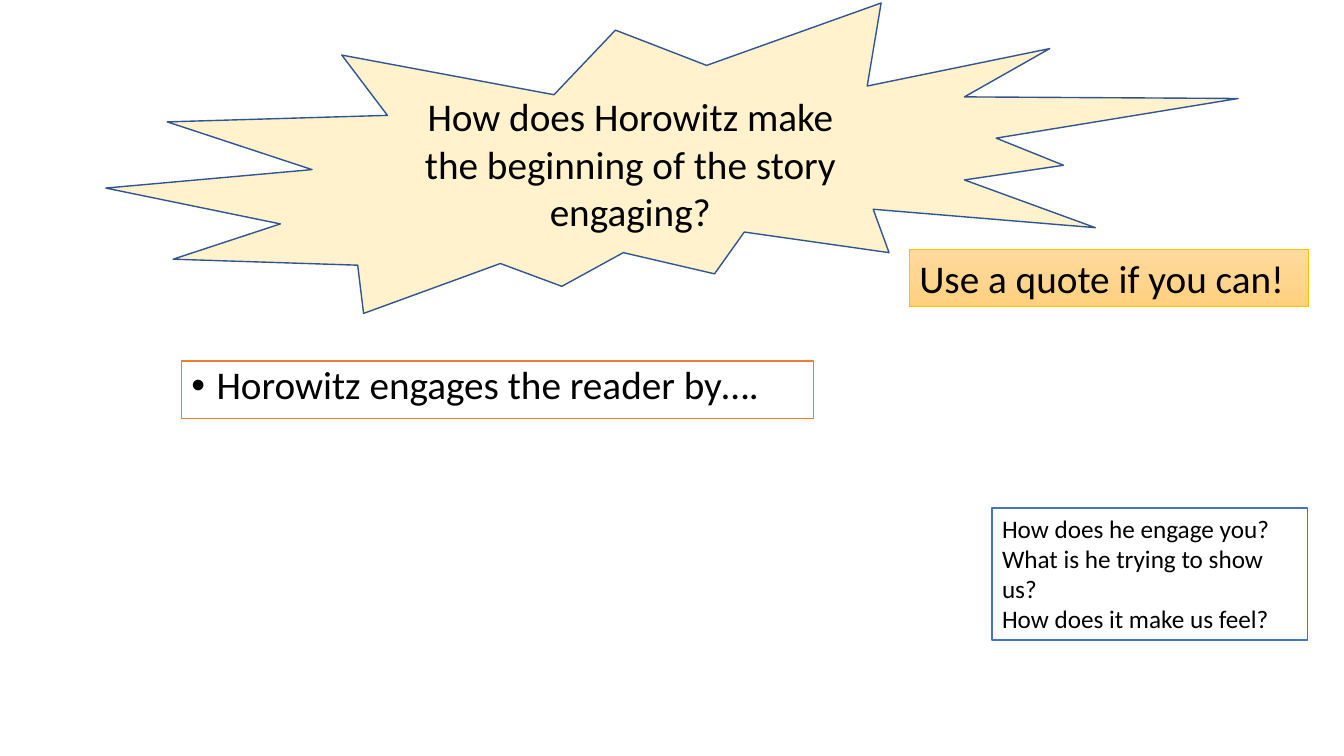
from copy import deepcopy
from dataclasses import dataclass

from pptx import Presentation
from pptx.dml.color import RGBColor as RGB
from pptx.enum.shapes import MSO_SHAPE as SHAPE
from pptx.enum.text import MSO_ANCHOR as ANCHOR, MSO_AUTO_SIZE as FIT, PP_ALIGN as ALIGN
from pptx.oxml import parse_xml
from pptx.oxml.ns import nsdecls
from pptx.util import Pt

PX = 9144  # EMU per px, 100 px to the inch


@dataclass(frozen=True)
class Theme:
    font: str = "Calibri"
    large: int = 28
    small: int = 18
    text: str = "000000"
    white: str = "FFFFFF"
    cream: str = "FFF2CC"
    orange: str = "ED7D31"
    blue: str = "4472C4"
    navy: str = "325491"
    gold: str = "FFC000"
    gold_fade: tuple = ("FFDB9E", "FFD590", "FFD07C")


theme = Theme()
prs = Presentation()
prs.slide_width, prs.slide_height = 1333 * PX, 750 * PX
slide = prs.slides.add_slide(prs.slide_layouts[6])


def add_panel(kind, box, fill, line, lines, size, weight=1, align=ALIGN.LEFT, anchor=ANCHOR.TOP):
    s = slide.shapes.add_shape(kind, *(n * PX for n in box))
    s.shadow.inherit = False
    s.fill.solid()
    s.fill.fore_color.rgb = RGB.from_string(fill)
    s.line.color.rgb = RGB.from_string(line)
    s.line.width = Pt(weight)
    tf = s.text_frame
    tf.word_wrap = True
    tf.vertical_anchor = anchor
    tf.text = "\n".join(lines)
    for p in tf.paragraphs:
        p.alignment = align
        p.font.name = theme.font
        p.font.size = Pt(size)
        p.font.color.rgb = RGB.from_string(theme.text)
    return s


# Bulleted sentence starter
starter = add_panel(SHAPE.RECTANGLE, (180, 358, 627, 57), theme.white, theme.orange,
                    ["Horowitz engages the reader by…."], theme.large)
p = starter.text_frame.paragraphs[0]
p.line_spacing = 0.9
pPr = p._p.get_or_add_pPr()
pPr.set("marL", str(25 * PX))
pPr.set("indent", str(-25 * PX))
bullet = parse_xml(f'<a:buChar {nsdecls("a")} char="•"/>')
bullet_font = parse_xml(f'<a:buFont {nsdecls("a")} typeface="Arial"/>')
pPr.find("{*}defRPr").addprevious(bullet_font)
bullet_font.addnext(bullet)

# Prompt questions
prompts = add_panel(SHAPE.RECTANGLE, (984, 504, 313, 131), theme.white, theme.blue,
                    ["How does he engage you?", "What is he trying to show us?",
                     "How does it make us feel?"], theme.small)
prompts.text_frame.auto_size = FIT.SHAPE_TO_FIT_TEXT

# Quote reminder with a three-stop gradient
reminder = add_panel(SHAPE.RECTANGLE, (902, 247, 396, 57), theme.gold_fade[0], theme.gold,
                     ["Use a quote if you can!"], theme.large, weight=0.5)
reminder.text_frame.word_wrap = False
reminder.text_frame.auto_size = FIT.SHAPE_TO_FIT_TEXT
reminder.fill.gradient()
reminder.fill.gradient_angle = 270
first_stop = reminder._element.spPr.find(".//{*}gs")
first_stop.addnext(deepcopy(first_stop))
for i, stop in enumerate(reminder.fill.gradient_stops):
    stop.position = i / 2
    stop.color.rgb = RGB.from_string(theme.gold_fade[i])

# Question burst
add_panel(SHAPE.EXPLOSION2, (105, 3, 1123, 308), theme.cream, theme.navy,
          ["How does Horowitz make the beginning of the story engaging?"], theme.large,
          align=ALIGN.CENTER, anchor=ANCHOR.MIDDLE)

prs.save("out.pptx")
